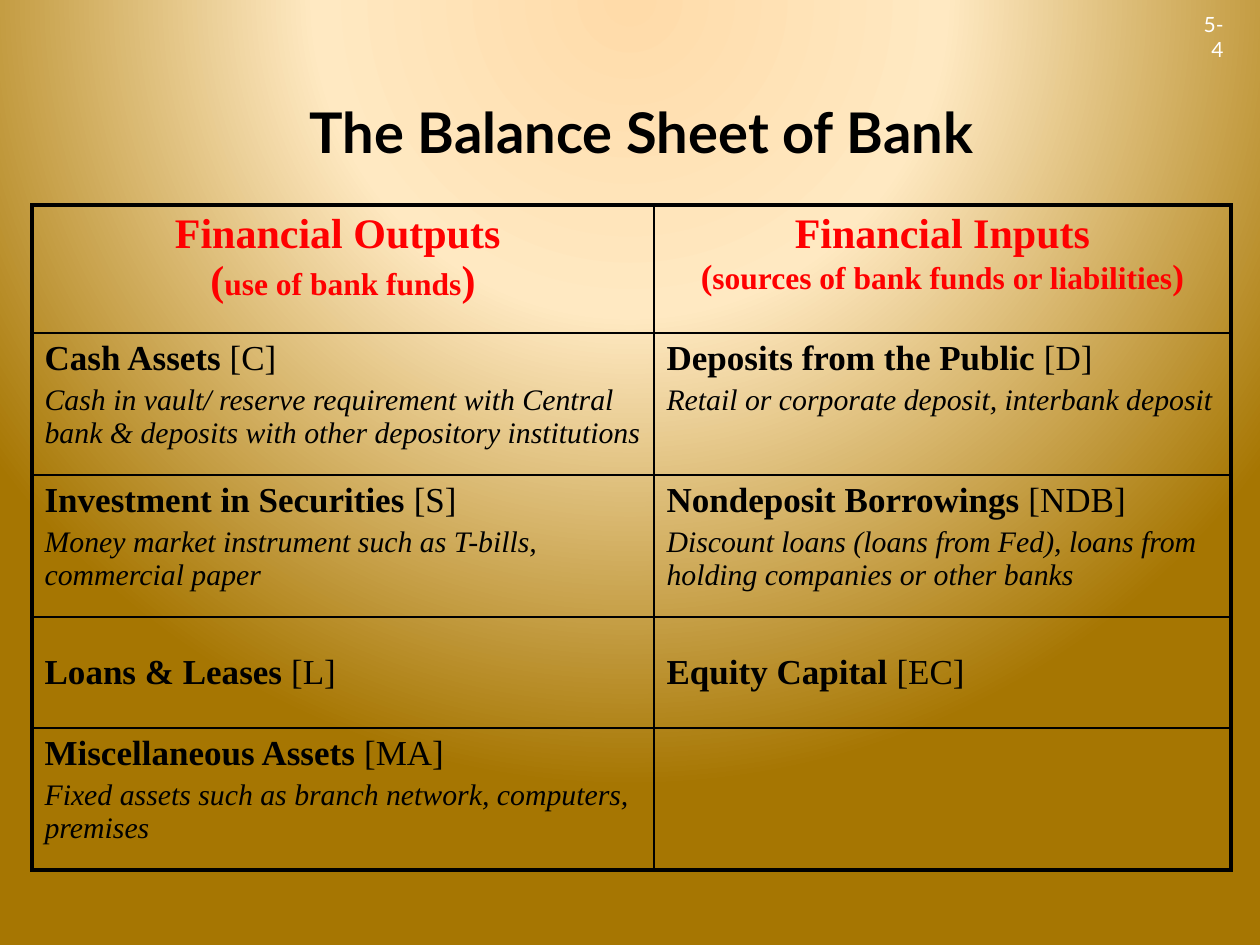
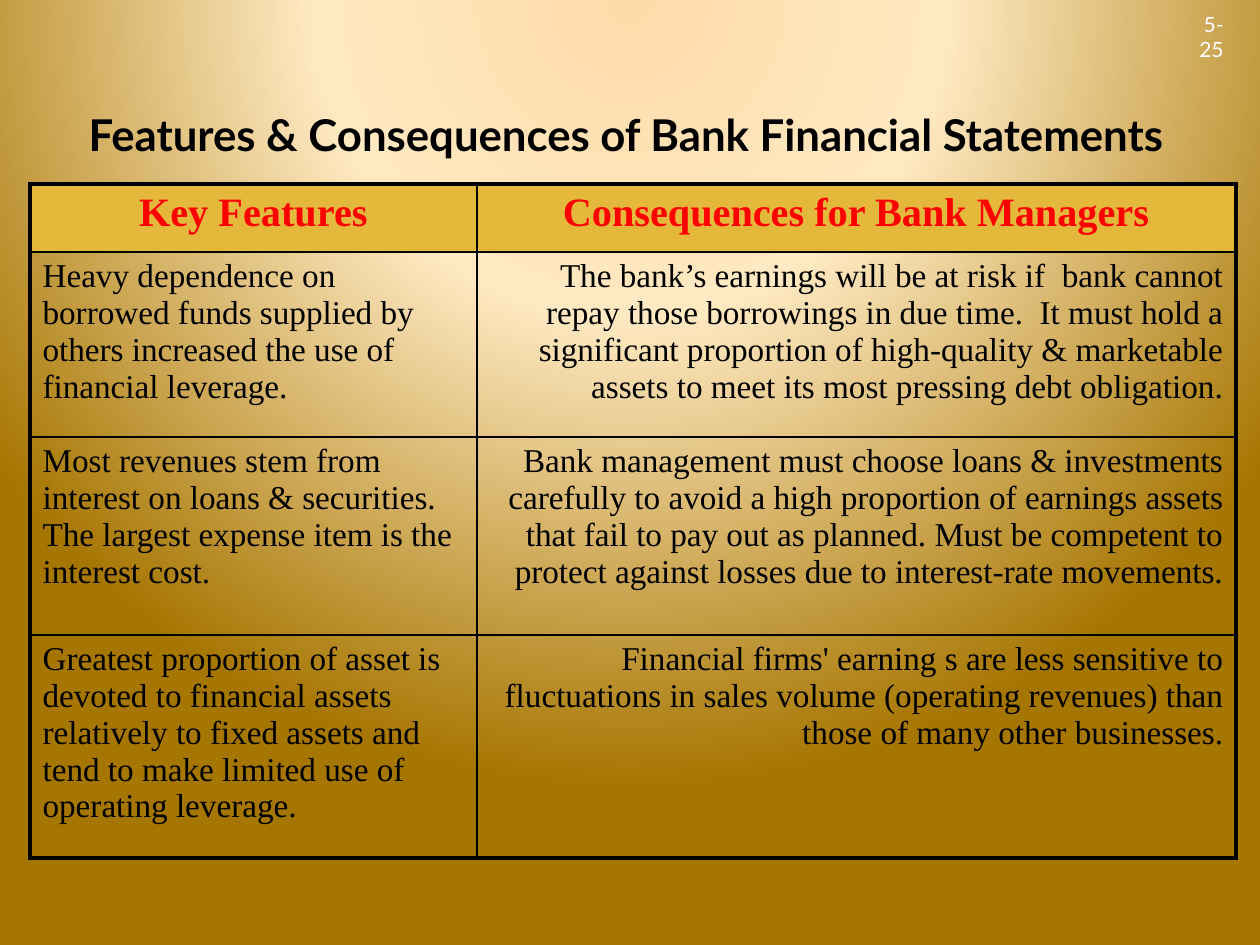
from lxml import etree
from pptx import Presentation
from pptx.dml.color import RGBColor
from pptx.enum.text import MSO_ANCHOR, MSO_AUTO_SIZE, PP_ALIGN
from pptx.oxml.ns import qn
from pptx.util import Emu, Pt

LEFT, CENTER, RIGHT = PP_ALIGN.LEFT, PP_ALIGN.CENTER, PP_ALIGN.RIGHT
TOP, MIDDLE = MSO_ANCHOR.TOP, MSO_ANCHOR.MIDDLE
NO_AUTOFIT = MSO_AUTO_SIZE.NONE

BLACK = RGBColor(0x00, 0x00, 0x00)
WHITE = RGBColor(0xFF, 0xFF, 0xFF)
RED = RGBColor(0xFF, 0x00, 0x00)
GOLD = RGBColor(0xE4, 0xB9, 0x3B)
PEACH = RGBColor(0xFF, 0xDB, 0xA9)
CREAM = RGBColor(0xFF, 0xE9, 0xC2)
BRONZE = RGBColor(0xA6, 0x76, 0x02)

GLOW_STOPS = [(0, PEACH), (40, CREAM), (100, BRONZE)]
GLOW_CENTER = {"l": 50, "t": -80, "r": 50, "b": 180}

HEADING_FONT = "Lato"
TABLE_FONT = "Times New Roman"
OUTER_LINE, INNER_LINE = Pt(2.25), Pt(1)

PX_PER_INCH = 126
SLIDE_SIZE = (1260, 945)
PAGE_NUMBER_BOX = (1181, 5, 55, 38)
TITLE_ONLY = 5


def px(length):
    return Emu(round(length * 914400 / PX_PER_INCH))


def write_text(text_frame, paragraphs, font=TABLE_FONT, size=20, color=BLACK,
               bold=False, align=LEFT, space_before=0):
    """Each paragraph is a list of (text, changes to the shared format)."""
    text_frame.word_wrap = True
    for index, runs in enumerate(paragraphs):
        paragraph = text_frame.add_paragraph() if index else text_frame.paragraphs[0]
        paragraph.alignment = align
        paragraph.space_before = Pt(space_before if index else 0)
        for text, changes in runs:
            run = paragraph.add_run()
            run.text = text
            run.font.name = font
            run.font.size = Pt(changes.get("size", size))
            run.font.bold = changes.get("bold", bold)
            run.font.italic = changes.get("italic", False)
            run.font.color.rgb = color


def plain(text):
    return [[(text, {})]]


def paint_background(master):
    """Give every slide the glow that spreads from above its top edge."""
    master.background.fill.gradient()
    gradient = master.element.find(".//" + qn("a:gradFill"))
    for child in list(gradient):
        gradient.remove(child)
    stops = etree.SubElement(gradient, qn("a:gsLst"))
    for position, color in GLOW_STOPS:
        stop = etree.SubElement(stops, qn("a:gs"), pos=str(position * 1000))
        etree.SubElement(stop, qn("a:srgbClr"), val=str(color))
    glow = etree.SubElement(gradient, qn("a:path"), path="circle")
    etree.SubElement(glow, qn("a:fillToRect"),
                     {side: str(value * 1000) for side, value in GLOW_CENTER.items()})


def add_titled_slide(presentation, title, title_box, title_size, page_number):
    slide = presentation.slides.add_slide(presentation.slide_layouts[TITLE_ONLY])
    shape = slide.shapes.title
    shape.left, shape.top, shape.width, shape.height = map(px, title_box)
    shape.text_frame.auto_size = NO_AUTOFIT
    shape.text_frame.vertical_anchor = MIDDLE
    write_text(shape.text_frame, plain(title), font=HEADING_FONT,
               size=title_size, bold=True, align=CENTER)
    number = slide.shapes.add_textbox(*map(px, PAGE_NUMBER_BOX))
    write_text(number.text_frame, plain(page_number), font=HEADING_FONT,
               size=12, color=WHITE, align=RIGHT)
    return slide


def set_borders(cell, outer_sides):
    properties = cell._tc.get_or_add_tcPr()
    for index, side in enumerate("LRTB"):
        width = OUTER_LINE if side in outer_sides else INNER_LINE
        line = etree.Element(qn("a:ln" + side), w=str(int(width)))
        fill = etree.SubElement(line, qn("a:solidFill"))
        etree.SubElement(fill, qn("a:srgbClr"), val=str(BLACK))
        properties.insert(index, line)


def add_framed_table(slide, left, top, column_widths, row_heights):
    """Add an unfilled table with a heavy frame and thin inner lines."""
    last_row, last_column = len(row_heights) - 1, len(column_widths) - 1
    table = slide.shapes.add_table(
        last_row + 1, last_column + 1, px(left), px(top),
        px(sum(column_widths)), px(sum(row_heights))).table
    table.first_row = table.horz_banding = False
    for column, width in zip(table.columns, column_widths):
        column.width = px(width)
    for row_index, height in enumerate(row_heights):
        table.rows[row_index].height = px(height)
        for column_index in range(last_column + 1):
            cell = table.cell(row_index, column_index)
            cell.fill.background()
            edges = {"L": column_index == 0, "R": column_index == last_column,
                     "T": row_index == 0, "B": row_index == last_row}
            set_borders(cell, [side for side, is_outer in edges.items() if is_outer])
    return table


def balance_heading(name, note, bracket_size):
    bracket = {"size": bracket_size}
    return [[(name, {})], [("(", bracket), (note, {"size": 18}), (")", bracket)]]


def balance_item(name, code, detail=None):
    paragraphs = [[(name + " ", {"bold": True}), (f"[{code}]", {})]]
    if detail:
        paragraphs.append([(detail, {"size": 17, "italic": True})])
    return paragraphs


def build_balance_sheet(presentation):
    slide = add_titled_slide(presentation, "The Balance Sheet of Bank",
                             (106, 98, 1071, 67), 32, "5-4")
    table = add_framed_table(slide, 32, 205, [622, 577], [128, 142, 142, 111, 142])
    headings = [
        balance_heading("Financial Outputs ", "use of bank funds", 24),
        balance_heading("Financial Inputs", "sources of bank funds or liabilities", 20),
    ]
    outputs = [
        ("Cash Assets", "C", "Cash in vault/ reserve requirement with Central bank "
                             "& deposits with other depository institutions"),
        ("Investment in Securities", "S",
         "Money market instrument such as T-bills, commercial paper"),
        ("Loans & Leases", "L"),
        ("Miscellaneous Assets", "MA",
         "Fixed assets such as branch network, computers, premises"),
    ]
    inputs = [
        ("Deposits from the Public", "D",
         "Retail or corporate deposit, interbank deposit"),
        ("Nondeposit Borrowings", "NDB", "Discount loans (loans from Fed), loans from "
                                         "holding companies or other banks"),
        ("Equity Capital", "EC"),
    ]
    for column, (heading, items) in enumerate(zip(headings, (outputs, inputs))):
        write_text(table.cell(0, column).text_frame, heading,
                   size=24, color=RED, bold=True, align=CENTER)
        for row, item in enumerate(items, start=1):
            cell = table.cell(row, column)
            paragraphs = balance_item(*item)
            cell.vertical_anchor = TOP if len(paragraphs) > 1 else MIDDLE
            write_text(cell.text_frame, paragraphs, space_before=3.4)


def build_features(presentation):
    slide = add_titled_slide(presentation,
                             "Features & Consequences of Bank Financial Statements ",
                             (30, 71, 1202, 126), 25, "5-25")
    table = add_framed_table(slide, 30, 184, [447, 759], [68, 185, 198, 223])
    for column, heading in enumerate(["Key Features", "Consequences for Bank Managers"]):
        cell = table.cell(0, column)
        cell.fill.solid()
        cell.fill.fore_color.rgb = GOLD
        write_text(cell.text_frame, plain(heading),
                   size=23, color=RED, bold=True, align=CENTER)
    rows = [
        ("Heavy dependence on borrowed funds supplied by others increased the use of "
         "financial leverage.",
         "The bank’s earnings will be at risk if  bank cannot repay those borrowings in "
         "due time.  It must hold a significant proportion of high-quality & marketable "
         "assets to meet its most pressing debt obligation."),
        ("Most revenues stem from interest on loans & securities. The largest expense "
         "item is the interest cost.",
         "Bank management must choose loans & investments carefully to avoid a high "
         "proportion of earnings assets that fail to pay out as planned. Must be "
         "competent to protect against losses due to interest-rate movements."),
        ("Greatest proportion of asset is devoted to financial assets relatively to "
         "fixed assets and tend to make limited use of operating leverage.",
         "Financial firms' earning s are less sensitive to fluctuations in sales volume "
         "(operating revenues) than those of many other businesses."),
    ]
    for row, texts in enumerate(rows, start=1):
        for column, (text, align) in enumerate(zip(texts, (LEFT, RIGHT))):
            write_text(table.cell(row, column).text_frame, plain(text),
                       size=19, align=align)


def main():
    presentation = Presentation()
    presentation.slide_width, presentation.slide_height = map(px, SLIDE_SIZE)
    paint_background(presentation.slide_master)
    build_balance_sheet(presentation)
    build_features(presentation)
    presentation.save("out.pptx")


if __name__ == "__main__":
    main()
